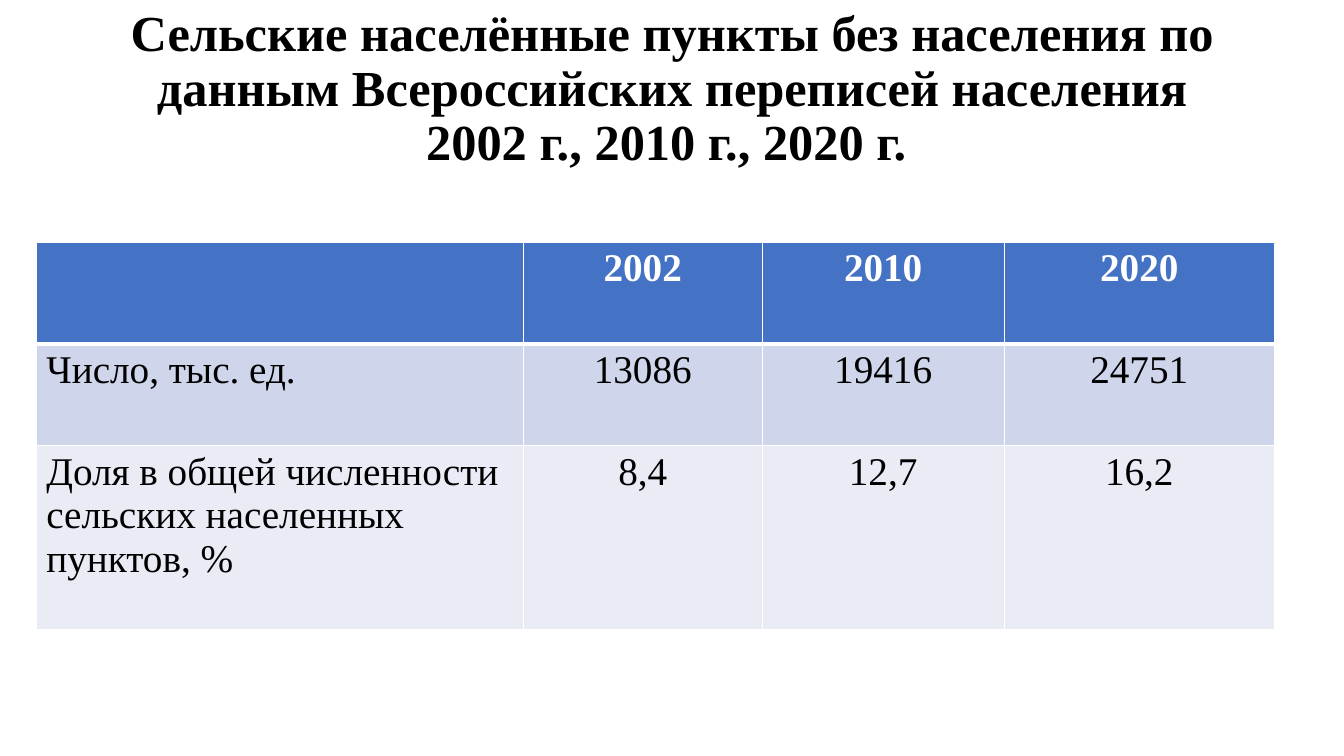
from lxml import etree
from pptx import Presentation
from pptx.dml.color import RGBColor
from pptx.enum.text import MSO_ANCHOR, PP_ALIGN
from pptx.oxml.ns import qn
from pptx.util import Inches, Pt

LEFT, CENTER = PP_ALIGN.LEFT, PP_ALIGN.CENTER
MIDDLE = MSO_ANCHOR.MIDDLE

TITLE = ("Сельские населённые пункты без населения по данным "
         "Всероссийских переписей населения 2002 г., 2010 г., 2020 г. ")
CENSUS_ROWS = [
    ("", "2002", "2010", "2020"),
    ("Число, тыс. ед.", "13086", "19416", "24751"),
    ("Доля в общей численности сельских населенных пунктов, %", "8,4", "12,7", "16,2"),
]
COLUMN_WIDTHS = (4.83, 2.37, 2.4, 2.68)
ROW_HEIGHTS = (1.01, 1.01, 1.83)

FONT = "Times New Roman"
BLACK = RGBColor(0x00, 0x00, 0x00)
WHITE = RGBColor(0xFF, 0xFF, 0xFF)
ROW_FILLS = (
    RGBColor(0x44, 0x72, 0xC4),
    RGBColor(0xCF, 0xD5, 0xEA),
    RGBColor(0xE9, 0xEB, 0xF5),
)


def write(frame, text, size, color=BLACK, bold=False, align=LEFT, spacing=None):
    paragraph = frame.paragraphs[0]
    paragraph.alignment = align
    paragraph.line_spacing = spacing
    if text:
        run = paragraph.add_run()
        run.text = text
        font = run.font
        font.name, font.size, font.bold = FONT, Pt(size), bold
        font.color.rgb = color


def set_borders(cell, **widths):
    """Draw white cell borders; widths in points by side: lnL, lnR, lnT, lnB."""
    properties = cell._tc.get_or_add_tcPr()
    for position, (side, width) in enumerate(widths.items()):
        line = etree.Element(qn(f"a:{side}"), w=str(Pt(width)))
        fill = etree.SubElement(line, qn("a:solidFill"))
        etree.SubElement(fill, qn("a:srgbClr"), val=str(WHITE))
        properties.insert(position, line)


def add_title(slide):
    box = slide.shapes.add_textbox(Inches(0.92), Inches(0.4), Inches(11.5), Inches(0.98))
    frame = box.text_frame
    frame.word_wrap = True
    frame.vertical_anchor = MIDDLE
    write(frame, TITLE, 36, bold=True, align=CENTER, spacing=0.9)


def add_census_table(slide):
    table = slide.shapes.add_table(
        len(CENSUS_ROWS), len(COLUMN_WIDTHS), Inches(0.36), Inches(2.4),
        Inches(sum(COLUMN_WIDTHS)), Inches(sum(ROW_HEIGHTS))).table
    for column, width in zip(table.columns, COLUMN_WIDTHS):
        column.width = Inches(width)
    for r, values in enumerate(CENSUS_ROWS):
        table.rows[r].height = Inches(ROW_HEIGHTS[r])
        header = r == 0
        for c, value in enumerate(values):
            cell = table.cell(r, c)
            cell.fill.solid()
            cell.fill.fore_color.rgb = ROW_FILLS[r]
            write(cell.text_frame, value, 28, color=WHITE if header else BLACK,
                  bold=header, align=CENTER if c else LEFT)
            set_borders(cell, lnL=1, lnR=1, lnT=3 if r == 1 else 1, lnB=3 if header else 1)


def main():
    deck = Presentation()
    deck.slide_width, deck.slide_height = Inches(13.33), Inches(7.5)
    slide = deck.slides.add_slide(deck.slide_layouts[6])
    add_title(slide)
    add_census_table(slide)
    deck.save("out.pptx")


if __name__ == "__main__":
    main()
